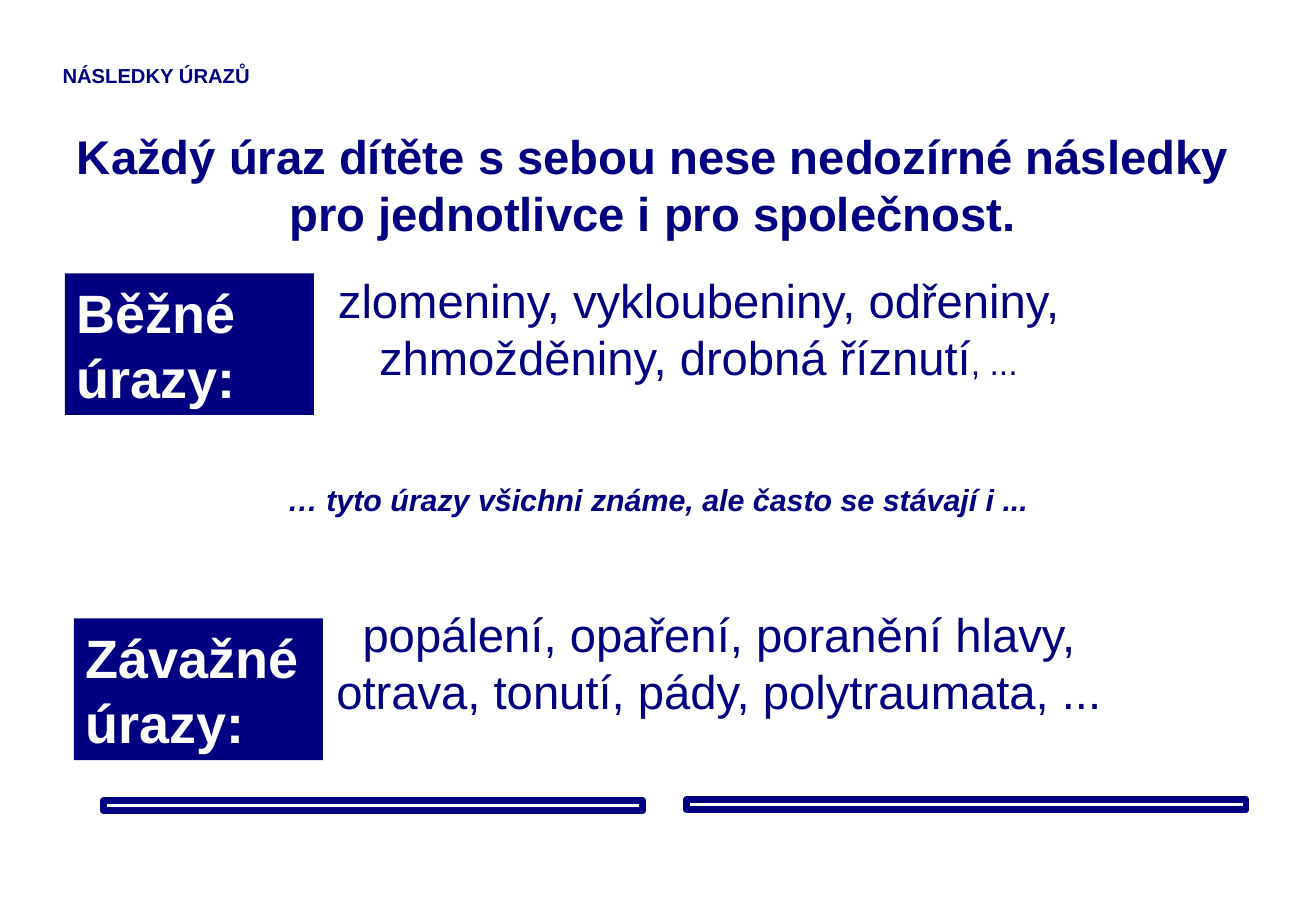
"""Build the slide about the consequences of childhood injuries."""
from pptx import Presentation
from pptx.dml.color import RGBColor
from pptx.enum.shapes import MSO_SHAPE
from pptx.enum.text import MSO_ANCHOR, PP_ALIGN
from pptx.util import Pt

TITLE = ("NÁSLEDKY ÚRAZŮ", (50, 50, 1181, 50))
HEADING = (
    "Každý úraz dítěte s sebou nese nedozírné následky pro jednotlivce i pro společnost.",
    (54, 120, 1181, 80),
)
BRIDGE = ("… tyto úrazy všichni známe, ale často se stávají i ...", (60, 469, 1180, 48))
GROUPS = [
    {
        "label": "Běžné úrazy:",
        "label_at": (64, 270),
        "injuries": "zlomeniny, vykloubeniny, odřeniny, zhmožděniny, drobná říznutí",
        "tail": ", ...",
        "injuries_box": (320, 262, 740, 180),
    },
    {
        "label": "Závažné úrazy:",
        "label_at": (73, 611),
        "injuries": "popálení, opaření, poranění hlavy, otrava, tonutí, pády, polytraumata, ...",
        "tail": "",
        "injuries_box": (310, 592, 800, 124),
    },
]
LABEL_SIZE = (246, 140)
BARS = [(102, 791, 533, 10), (678, 790, 553, 10)]

THEME = {
    "font": "Arial",
    "navy": RGBColor(0x00, 0x00, 0x80),
    "white": RGBColor(0xFF, 0xFF, 0xFF),
    "title": 12,
    "heading": 28,
    "label": 32,
    "injuries": 28,
    "tail": 20,
    "bridge": 18,
    "bar": 4,
}
PX = 7620
SLIDE_SIZE = (1300, 900)


def emu(lengths):
    return [n * PX for n in lengths]


def style(r, size, color="navy", bold=False, italic=False):
    r.font.name = THEME["font"]
    r.font.size = Pt(THEME[size])
    r.font.color.rgb = THEME[color]
    r.font.bold = bold
    r.font.italic = italic


def write(sp, text, size, align=PP_ALIGN.CENTER, anchor=MSO_ANCHOR.TOP, **look):
    tf = sp.text_frame
    tf.word_wrap = True
    tf.vertical_anchor = anchor
    p = tf.paragraphs[0]
    p.text = text
    p.alignment = align
    style(p.runs[0], size, **look)
    return p


def add_text(s, text, box, size, **look):
    return write(s.shapes.add_textbox(*emu(box)), text, size, **look)


def add_rect(s, box):
    sp = s.shapes.add_shape(MSO_SHAPE.RECTANGLE, *emu(box))
    sp.shadow.inherit = False
    return sp


def add_bar(s, box):
    sp = add_rect(s, box)
    sp.fill.background()
    sp.line.color.rgb = THEME["navy"]
    sp.line.width = Pt(THEME["bar"])


def add_group(s, group):
    sp = add_rect(s, group["label_at"] + LABEL_SIZE)
    sp.fill.solid()
    sp.fill.fore_color.rgb = THEME["navy"]
    sp.line.fill.background()
    write(sp, group["label"], "label", align=PP_ALIGN.LEFT, color="white", bold=True)

    p = add_text(s, group["injuries"], group["injuries_box"], "injuries")
    if group["tail"]:
        r = p.add_run()
        r.text = group["tail"]
        style(r, "tail")


def main():
    prs = Presentation()
    prs.slide_width, prs.slide_height = emu(SLIDE_SIZE)
    s = prs.slides.add_slide(prs.slide_layouts[6])
    add_text(s, *HEADING, "heading", bold=True)
    add_text(s, *TITLE, "title", align=PP_ALIGN.LEFT, anchor=MSO_ANCHOR.MIDDLE, bold=True)
    for box in BARS:
        add_bar(s, box)
    for group in GROUPS:
        add_group(s, group)
    add_text(s, *BRIDGE, "bridge", bold=True, italic=True)
    prs.save("out.pptx")


if __name__ == "__main__":
    main()
